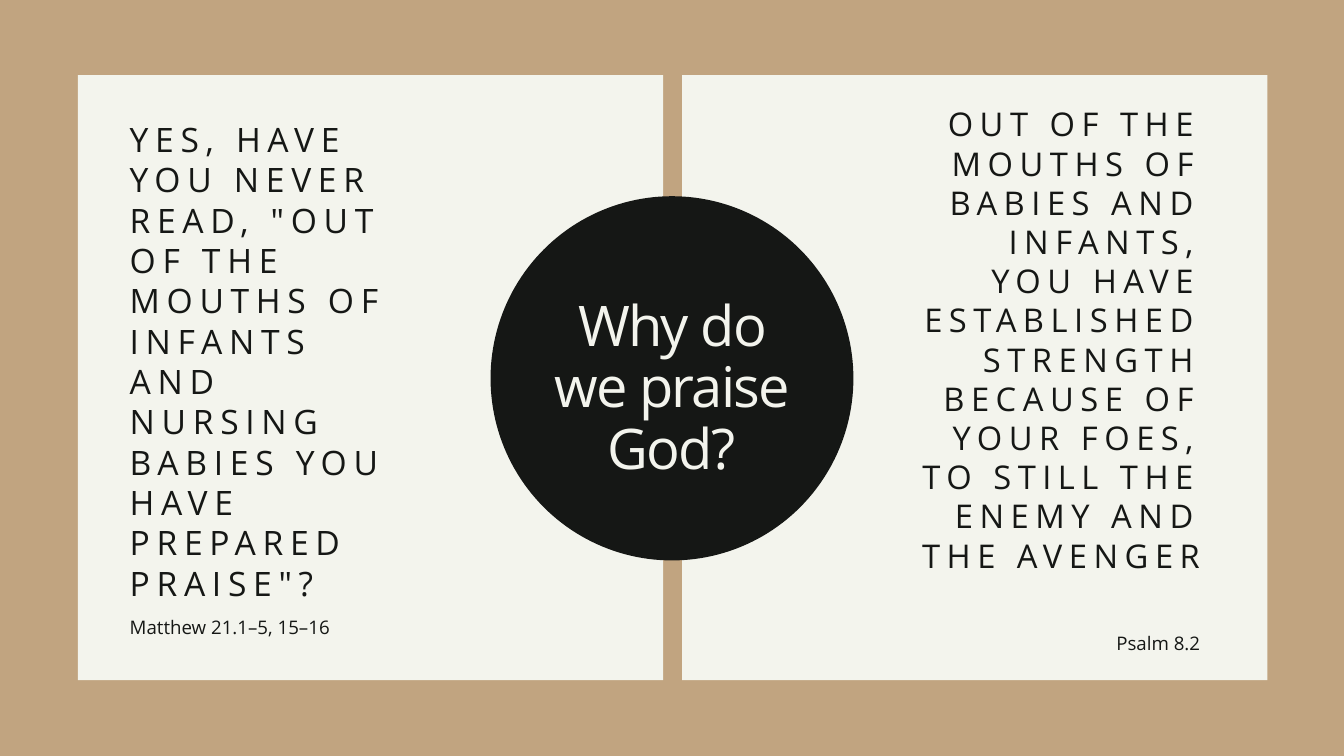
from pptx import Presentation
from pptx.dml.color import RGBColor
from pptx.enum.shapes import MSO_SHAPE as Shape
from pptx.enum.text import MSO_AUTO_SIZE as Fit, PP_ALIGN as Align
from pptx.util import Inches, Pt

TAN, CREAM, INK = "C1A480", "F3F4ED", "151715"


def paint(fill, color):
    fill.solid()
    fill.fore_color.rgb = RGBColor.from_string(color)


class Page:
    font = "Open Sans"

    def __init__(self, deck, color):
        self.slide = deck.slides.add_slide(deck.slide_layouts[6])
        paint(self.slide.background.fill, color)

    def block(self, kind, box, color):
        shape = self.slide.shapes.add_shape(kind, *map(Inches, box))
        shape.shadow.inherit = False
        paint(shape.fill, color)
        shape.line.fill.background()

    def text(self, words, box, size, lead, align=Align.LEFT, color=INK, gap=0):
        """Add a text box; lead is the line pitch and gap the letter spacing, in points."""
        frame = self.slide.shapes.add_textbox(*map(Inches, box)).text_frame
        frame.margin_left = frame.margin_right = 0
        frame.margin_top = frame.margin_bottom = 0
        frame.word_wrap = True
        frame.auto_size = Fit.SHAPE_TO_FIT_TEXT
        para = frame.paragraphs[0]
        para.alignment = align
        para.line_spacing = Pt(lead)
        para.font.name = self.font
        para.font.size = Pt(size)
        para.font.color.rgb = RGBColor.from_string(color)
        run = para.add_run()
        run.text = words
        if gap:
            run._r.get_or_add_rPr().set("spc", str(round(gap * 100)))


def main():
    deck = Presentation()
    deck.slide_width, deck.slide_height = Inches(20), Inches(11.25)
    page = Page(deck, TAN)

    for left in (1.16, 10.15):
        page.block(Shape.RECTANGLE, (left, 1.12, 8.71, 9), CREAM)
    page.block(Shape.OVAL, (7.3, 2.92, 5.4, 5.42), INK)
    page.text("Why do we praise God?", (8.04, 4.4, 3.91, 2.77), 60, 66,
              Align.CENTER, CREAM, -1.8)

    verses = [
        (13.69, Align.RIGHT, 35, 1.55, 7.58,
         "OUT OF THE MOUTHS OF BABIES AND INFANTS, YOU HAVE ESTABLISHED "
         "STRENGTH BECAUSE OF YOUR FOES, TO STILL THE ENEMY AND THE AVENGER",
         9.34, "Psalm 8.2"),
        (1.93, Align.LEFT, 36, 1.77, 7.12,
         'YES, HAVE YOU NEVER READ, "OUT OF THE MOUTHS OF INFANTS AND '
         'NURSING BABIES YOU HAVE PREPARED PRAISE"?',
         9.11, "Matthew 21.1–5, 15–16"),
    ]
    for left, align, size, top, high, verse, foot, source in verses:
        page.text(verse, (left, top, 4.17, high), size, size * 1.2, align,
                  gap=size / 5)
        page.text(source, (left, foot, 4.17, 0.37), 20, 28, align)

    deck.save("out.pptx")


if __name__ == "__main__":
    main()
